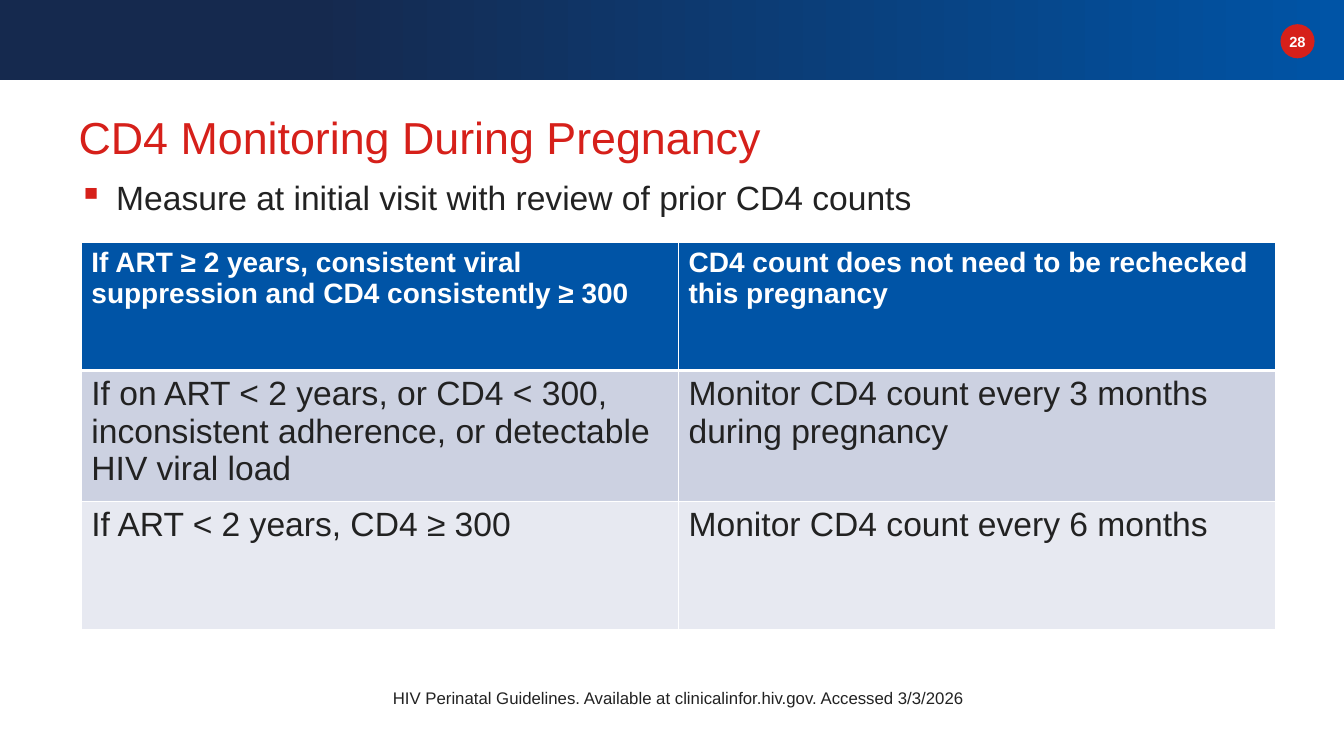
from dataclasses import dataclass

from lxml import etree
from pptx import Presentation
from pptx.dml.color import RGBColor
from pptx.enum.shapes import MSO_SHAPE
from pptx.enum.text import MSO_ANCHOR, PP_ALIGN
from pptx.oxml.ns import qn
from pptx.util import Cm, Pt

RECTANGLE, OVAL = MSO_SHAPE.RECTANGLE, MSO_SHAPE.OVAL
TOP, MIDDLE = MSO_ANCHOR.TOP, MSO_ANCHOR.MIDDLE
LEFT, CENTER = PP_ALIGN.LEFT, PP_ALIGN.CENTER


@dataclass(frozen=True)
class Theme:
    """Colours, font and type sizes of the deck."""
    font: str = "Arial"
    navy: str = "15294E"
    blue: str = "0054A6"
    red: str = "D6201A"
    ink: str = "222222"
    white: str = "FFFFFF"
    bands: tuple = ("CCD1E1", "E7E9F1")
    title: float = 32
    body: float = 24
    header: float = 20
    source: float = 12
    number: float = 10.5


THEME = Theme()
GUIDANCE = [
    ("If ART ≥ 2 years, consistent viral suppression and CD4 consistently ≥ 300",
     "CD4 count does not need to be rechecked this pregnancy"),
    ("If on ART < 2 years, or CD4 < 300, inconsistent adherence, or detectable HIV viral load",
     "Monitor CD4 count every 3 months during pregnancy"),
    ("If ART < 2 years, CD4 ≥ 300", "Monitor CD4 count every 6 months"),
]


def write(frame, text, size, color, bold=False, align=LEFT):
    """Put one styled paragraph in a text frame and return it."""
    para = frame.paragraphs[0]
    para.text = text
    para.alignment = align
    para.font.name = THEME.font
    para.font.size = Pt(size)
    para.font.bold = bold
    para.font.color.rgb = RGBColor.from_string(color)
    return para


def add_text(page, box, text, size, color, anchor=TOP):
    """Place a wrapping text box and return its paragraph."""
    frame = page.shapes.add_textbox(*map(Cm, box)).text_frame
    frame.word_wrap = True
    frame.vertical_anchor = anchor
    return write(frame, text, size, color)


def add_plain_shape(page, kind, box):
    """Place a preset shape without line or shadow."""
    shape = page.shapes.add_shape(kind, *map(Cm, box))
    shape.shadow.inherit = False
    shape.line.fill.background()
    return shape


def add_banner(page, box, number):
    """Draw the gradient band with the page number badge at its right."""
    left, top, width, height = box
    band = add_plain_shape(page, RECTANGLE, box)
    band.fill.gradient()
    band.fill.gradient_angle = 0
    for stop, color, position in zip(band.fill.gradient_stops,
                                     (THEME.navy, THEME.blue), (0.23, 1)):
        stop.color.rgb = RGBColor.from_string(color)
        stop.position = position
    size = 0.86
    badge = add_plain_shape(page, OVAL, (left + width - 1.6, top + 0.61, size, size))
    badge.fill.solid()
    badge.fill.fore_color.rgb = RGBColor.from_string(THEME.red)
    frame = badge.text_frame
    frame.margin_left = frame.margin_right = frame.margin_top = frame.margin_bottom = 0
    frame.word_wrap = False
    frame.vertical_anchor = MIDDLE
    write(frame, number, THEME.number, THEME.white, True, CENTER)


def add_bullet(para):
    """Give a paragraph the red square bullet and a hanging indent."""
    properties = para._p.get_or_add_pPr()
    properties.set("marL", str(Cm(0.95)))
    properties.set("indent", str(-Cm(0.95)))
    color = etree.Element(qn("a:buClr"))
    etree.SubElement(color, qn("a:srgbClr"), val=THEME.red)
    mark = etree.Element(qn("a:buChar"), char="▪")
    properties.insert(0, color)
    properties.insert(1, mark)


def add_heading(page, box):
    """Place the title and the bullet beneath it."""
    left, top, width, height = box
    title_height = 1.8
    add_text(page, (left, top, width, title_height), "CD4 Monitoring During Pregnancy",
             THEME.title, THEME.red, MIDDLE)
    para = add_text(page, (left, top + title_height, width, height - title_height),
                    "Measure at initial visit with review of prior CD4 counts",
                    THEME.body, THEME.ink)
    add_bullet(para)


def set_borders(cell, widths):
    """Draw white borders, widths in points by side."""
    properties = cell._tc.get_or_add_tcPr()
    for index, (side, width) in enumerate(widths.items()):
        line = etree.Element(qn(f"a:ln{side}"), w=str(Pt(width)))
        fill = etree.SubElement(line, qn("a:solidFill"))
        etree.SubElement(fill, qn("a:srgbClr"), val=THEME.white)
        properties.insert(index, line)


def add_guidance_table(page, box, rows):
    """Place the table: a blue header row, then banded rows."""
    table = page.shapes.add_table(len(rows), len(rows[0]), *map(Cm, box)).table
    for row_index, row in enumerate(rows):
        table.rows[row_index].height = Cm(box[3] / len(rows))
        header = row_index == 0
        fill = THEME.blue if header else THEME.bands[(row_index - 1) % 2]
        size, color = (THEME.header, THEME.white) if header else (THEME.body, THEME.ink)
        for column_index, text in enumerate(row):
            cell = table.cell(row_index, column_index)
            cell.fill.solid()
            cell.fill.fore_color.rgb = RGBColor.from_string(fill)
            write(cell.text_frame, text, size, color, header)
            set_borders(cell, {"L": 1, "R": 1, "T": 3 if row_index == 1 else 1,
                               "B": 3 if header else 1})


def main():
    """Build the slide and save it."""
    deck = Presentation()
    deck.slide_width, deck.slide_height = Cm(33.87), Cm(19.05)
    page = deck.slides.add_slide(deck.slide_layouts[6])
    add_banner(page, (0, 0, 33.87, 2.03), "28")
    add_heading(page, (1.73, 2.54, 29.2, 3.4))
    add_guidance_table(page, (2.05, 6.1, 30.1, 9.7), GUIDANCE)
    add_text(page, (9.65, 17.2, 15.14, 0.76),
             "HIV Perinatal Guidelines. Available at clinicalinfor.hiv.gov. Accessed 3/3/2026",
             THEME.source, THEME.ink)
    deck.save("out.pptx")


if __name__ == "__main__":
    main()
